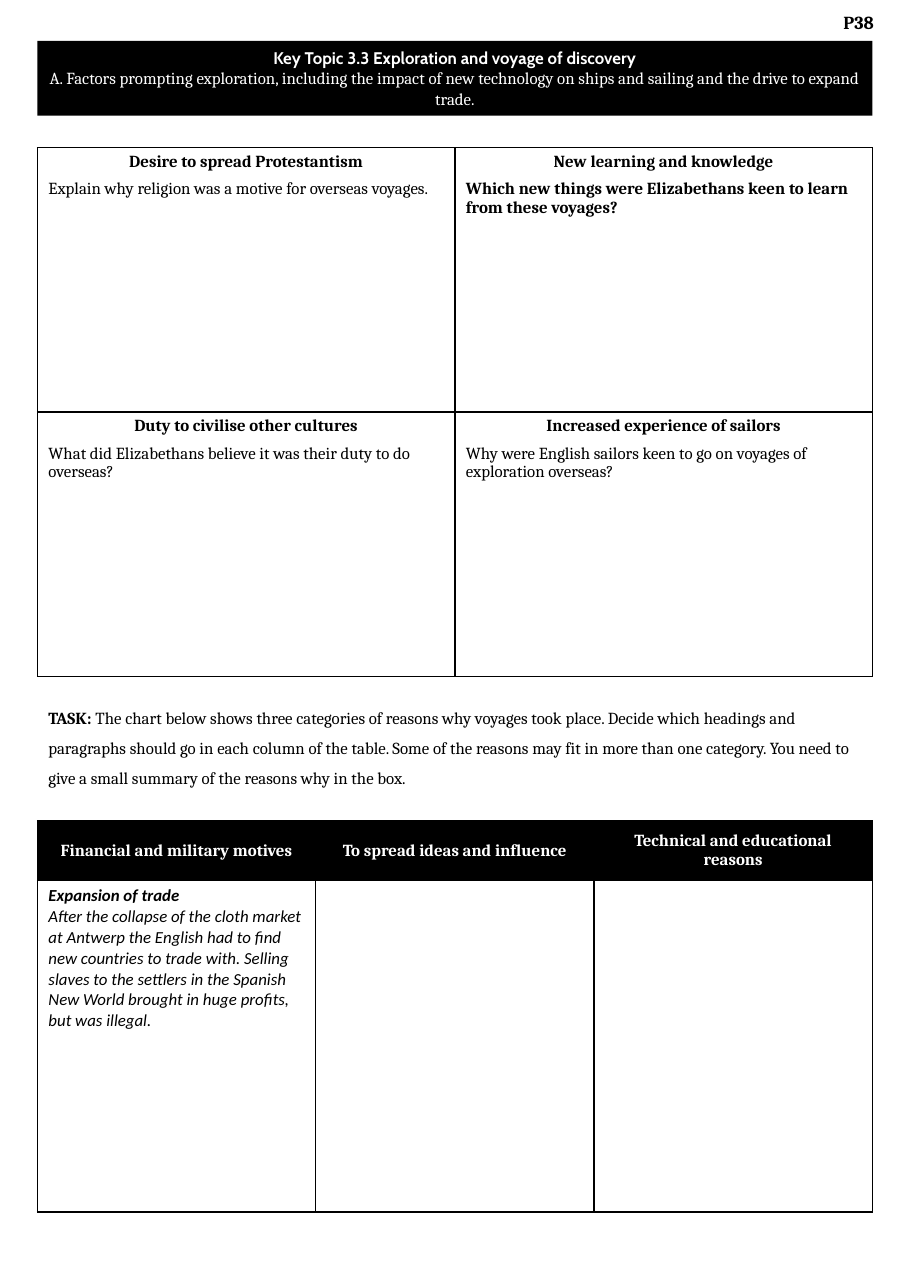
from lxml import etree
from pptx import Presentation
from pptx.dml.color import RGBColor
from pptx.enum.text import MSO_ANCHOR, MSO_AUTO_SIZE, PP_ALIGN
from pptx.oxml.ns import qn
from pptx.util import Inches, Pt

LEFT, CENTER = PP_ALIGN.LEFT, PP_ALIGN.CENTER
TOP, MIDDLE = MSO_ANCHOR.TOP, MSO_ANCHOR.MIDDLE
BLACK, WHITE = "000000", "FFFFFF"
EDGE, WIDTH = 0.34, 7.58

PAGE = "P38"
TOPIC = "Key Topic 3.3 Exploration and voyage of discovery"
FOCUS = ("A. Factors prompting exploration, including the impact of new technology "
         "on ships and sailing and the drive to expand trade.")
# heading, question, question in bold
MOTIVES = [
    [("Desire to spread Protestantism",
      "Explain why religion was a motive for overseas voyages.", False),
     ("New learning and knowledge",
      "Which new things were Elizabethans keen to learn from these voyages?", True)],
    [("Duty to civilise other cultures",
      "What did Elizabethans believe it was their duty to do overseas?", False),
     ("Increased experience of sailors",
      "Why were English sailors keen to go on voyages of exploration overseas?", False)],
]
TASK = ("The chart below shows three categories of reasons why voyages took place. "
        "Decide which headings and paragraphs should go in each column of the table. "
        "Some of the reasons may fit in more than one category. You need to give a "
        "small summary of the reasons why in the box.")
REASONS = ["Financial and military motives", "To spread ideas and influence",
           "Technical and educational reasons"]
SAMPLE = ("Expansion of trade",
          "After the collapse of the cloth market at Antwerp the English had to find "
          "new countries to trade with. Selling slaves to the settlers in the Spanish "
          "New World brought in huge profits, but was illegal.")


def color(code):
    return RGBColor.from_string(code)


def paint(part, code):
    part.fill.solid()
    part.fill.fore_color.rgb = color(code)


def write(para, text, font="Cambria", size=11, ink=BLACK, bold=False,
          italic=False, align=LEFT, line=None, before=0, after=0):
    """Add one formatted run to a paragraph and set the paragraph's layout."""
    para.alignment = align
    para.line_spacing = line
    para.space_before, para.space_after = Pt(before), Pt(after)
    run = para.add_run()
    run.text = text
    face = run.font
    face.name, face.size, face.bold, face.italic = font, Pt(size), bold, italic
    face.color.rgb = color(ink)


def frame_of(shape, anchor=TOP, inset=0.1):
    frame = shape.text_frame
    frame.word_wrap = True
    frame.auto_size = MSO_AUTO_SIZE.NONE
    frame.vertical_anchor = anchor
    frame.margin_left = frame.margin_right = Inches(0.1)
    frame.margin_top = frame.margin_bottom = Inches(inset)
    return frame


def add_box(slide, x, y, w, h, inset):
    box = slide.shapes.add_textbox(Inches(x), Inches(y), Inches(w), Inches(h))
    return frame_of(box, inset=inset).paragraphs[0]


def border(cell):
    props = cell._tc.get_or_add_tcPr()
    for spot, side in enumerate(("a:lnL", "a:lnR", "a:lnT", "a:lnB")):
        edge = etree.Element(qn(side), w=str(Pt(1)))
        fill = etree.SubElement(edge, qn("a:solidFill"))
        etree.SubElement(fill, qn("a:srgbClr"), val=BLACK)
        props.insert(spot, edge)


def add_grid(slide, y, heights, cols):
    """Add a full-width table with white cells and thin black borders."""
    shape = slide.shapes.add_table(len(heights), cols, Inches(EDGE), Inches(y),
                                   Inches(WIDTH), Inches(sum(heights)))
    grid = shape.table
    grid.first_row = grid.horz_banding = False
    for row, height in zip(grid.rows, heights):
        row.height = Inches(height)
    for col in grid.columns:
        col.width = Inches(WIDTH / cols)
    for cell in grid.iter_cells():
        paint(cell, WHITE)
        border(cell)
    return grid


def main():
    deck = Presentation()
    deck.slide_width, deck.slide_height = Inches(8.27), Inches(11.69)
    slide = deck.slides.add_slide(deck.slide_layouts[5])

    banner = slide.shapes.title
    banner.left, banner.top = Inches(EDGE), Inches(0.37)
    banner.width, banner.height = Inches(WIDTH), Inches(0.68)
    paint(banner, BLACK)
    frame = frame_of(banner, MIDDLE)
    write(frame.paragraphs[0], TOPIC, font="Cabin", ink=WHITE, bold=True, align=CENTER)
    write(frame.add_paragraph(), FOCUS, ink=WHITE, align=CENTER)

    write(add_box(slide, 7.49, 0, 0.61, 0.89, 0.1), PAGE, size=12, bold=True, align=CENTER)

    motives = add_grid(slide, 1.34, [2.4, 2.4], 2)
    for r, row in enumerate(MOTIVES):
        for c, (head, question, strong) in enumerate(row):
            frame = motives.cell(r, c).text_frame
            write(frame.paragraphs[0], head, bold=True, align=CENTER, line=Pt(12), after=3)
            write(frame.add_paragraph(), question, bold=strong, line=Pt(12),
                  before=3, after=3)

    task = add_box(slide, EDGE, 6.28, WIDTH, 1.03, 0.05)
    write(task, "TASK: ", bold=True, line=1.5)
    write(task, TASK, line=1.5)

    reasons = add_grid(slide, 7.45, [0.54, 3.01], len(REASONS))
    for c, head in enumerate(REASONS):
        cell = reasons.cell(0, c)
        paint(cell, BLACK)
        cell.vertical_anchor = MIDDLE
        write(cell.text_frame.paragraphs[0], head, ink=WHITE, bold=True, align=CENTER)
    frame = reasons.cell(1, 0).text_frame
    head, body = SAMPLE
    write(frame.paragraphs[0], head, font="Calibri", bold=True, italic=True)
    write(frame.add_paragraph(), body, font="Calibri", italic=True)

    deck.save("out.pptx")


if __name__ == "__main__":
    main()
